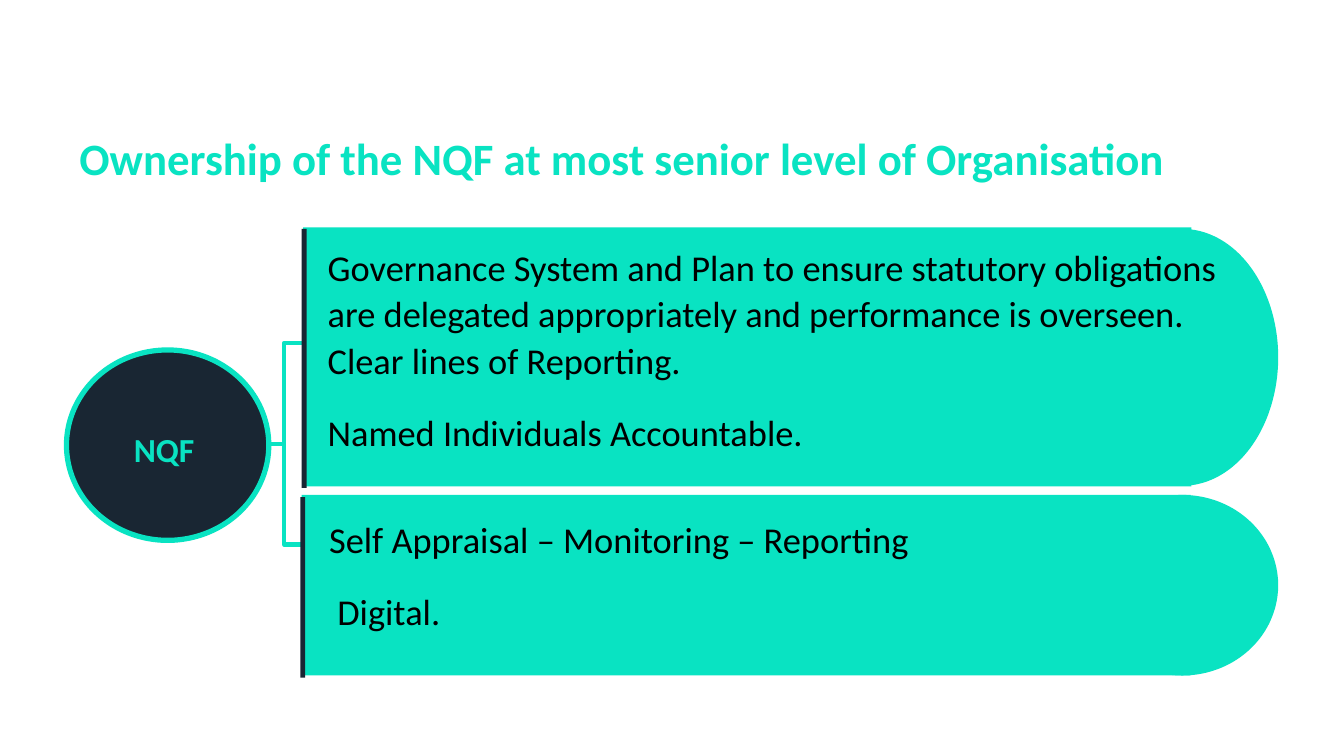
from pptx import Presentation
from pptx.dml.color import RGBColor
from pptx.enum.shapes import MSO_CONNECTOR, MSO_SHAPE
from pptx.enum.text import MSO_ANCHOR, MSO_AUTO_SIZE, PP_ALIGN
from pptx.util import Pt
from lxml.etree import SubElement
from pptx.oxml.ns import qn

TEAL, NAVY, BLACK = "09E3C2", "192633", "000000"


def paint(color, value):
    color.rgb = RGBColor.from_string(value)


class Deck:
    font = "Calibri"

    def __init__(self, wide, high):
        self.prs = Presentation()
        self.prs.slide_width, self.prs.slide_height = Pt(wide), Pt(high)
        self.slide = self.prs.slides.add_slide(self.prs.slide_layouts[5])

    def fill_text(self, frame, lines, size, color, bold=False, space=None, gap=(0, 0)):
        frame.word_wrap = True
        for i, line in enumerate(lines):
            para = frame.paragraphs[0] if i == 0 else frame.add_paragraph()
            para.alignment = PP_ALIGN.LEFT
            para.line_spacing = space
            para.space_before = Pt(gap[0] if i else 0)
            para.space_after = Pt(gap[1])
            run = para.add_run()
            run.text = line
            run.font.name, run.font.size, run.font.bold = self.font, Pt(size), bold
            paint(run.font.color, color)

    def title(self, box, line, size, color):
        shape = self.slide.shapes.title
        shape.left, shape.top, shape.width, shape.height = map(Pt, box)
        frame = shape.text_frame
        frame.auto_size = MSO_AUTO_SIZE.NONE
        frame.vertical_anchor = MSO_ANCHOR.MIDDLE
        self.fill_text(frame, [line], size, color, bold=True, space=0.9)

    def text(self, box, lines, size, color, **look):
        frame = self.slide.shapes.add_textbox(*map(Pt, box)).text_frame
        self.fill_text(frame, lines, size, color, **look)

    def shape(self, kind, box, fill, edge=None, width=0):
        shape = self.slide.shapes.add_shape(kind, *map(Pt, box))
        shape.shadow.inherit = False
        shape.fill.solid()
        paint(shape.fill.fore_color, fill)
        if edge:
            paint(shape.line.color, edge)
            shape.line.width = Pt(width)
        else:
            shape.line.fill.background()

    def elbow(self, start, end, color, width):
        link = self.slide.shapes.add_connector(
            MSO_CONNECTOR.ELBOW, *map(Pt, start + end))
        paint(link.line.color, color)
        link.line.width = Pt(width)
        SubElement(link._element.spPr, qn("a:effectLst"))

    def panel(self, cap, body, bar, box, lines):
        self.shape(MSO_SHAPE.OVAL, cap, TEAL)
        self.shape(MSO_SHAPE.RECTANGLE, body, TEAL)
        self.shape(MSO_SHAPE.RECTANGLE, bar, NAVY)
        self.text(box, lines, 26, BLACK, space=1.07, gap=(10, 8))


def main():
    deck = Deck(960, 540)
    deck.title((49.5, 79, 841.5, 72.5),
               "Ownership of the NQF at most senior level of Organisation", 32, TEAL)
    for end in (245, 389):
        deck.elbow((167, 317), (239, end), TEAL, 3)
    deck.shape(MSO_SHAPE.OVAL, (47.5, 250, 144.5, 136), NAVY, TEAL, 3.75)
    deck.text((88.5, 302.5, 74, 36), ["NQF"], 24, TEAL, bold=True)
    deck.panel((776, 353.5, 137, 129), (215.5, 353.5, 635, 129),
               (214.5, 355, 3.5, 129), (228, 363.5, 662.5, 119.5),
               ["Self Appraisal – Monitoring – Reporting", " Digital."])
    deck.panel((776, 163.5, 137, 183.5), (216.5, 162.5, 634.5, 185),
               (215.5, 163.5, 3.5, 185), (227, 169, 664, 178.5),
               ["Governance System and Plan to ensure statutory obligations are "
                "delegated appropriately and performance is overseen. "
                "Clear lines of Reporting.", "Named Individuals Accountable."])
    deck.prs.save("out.pptx")


if __name__ == "__main__":
    main()
